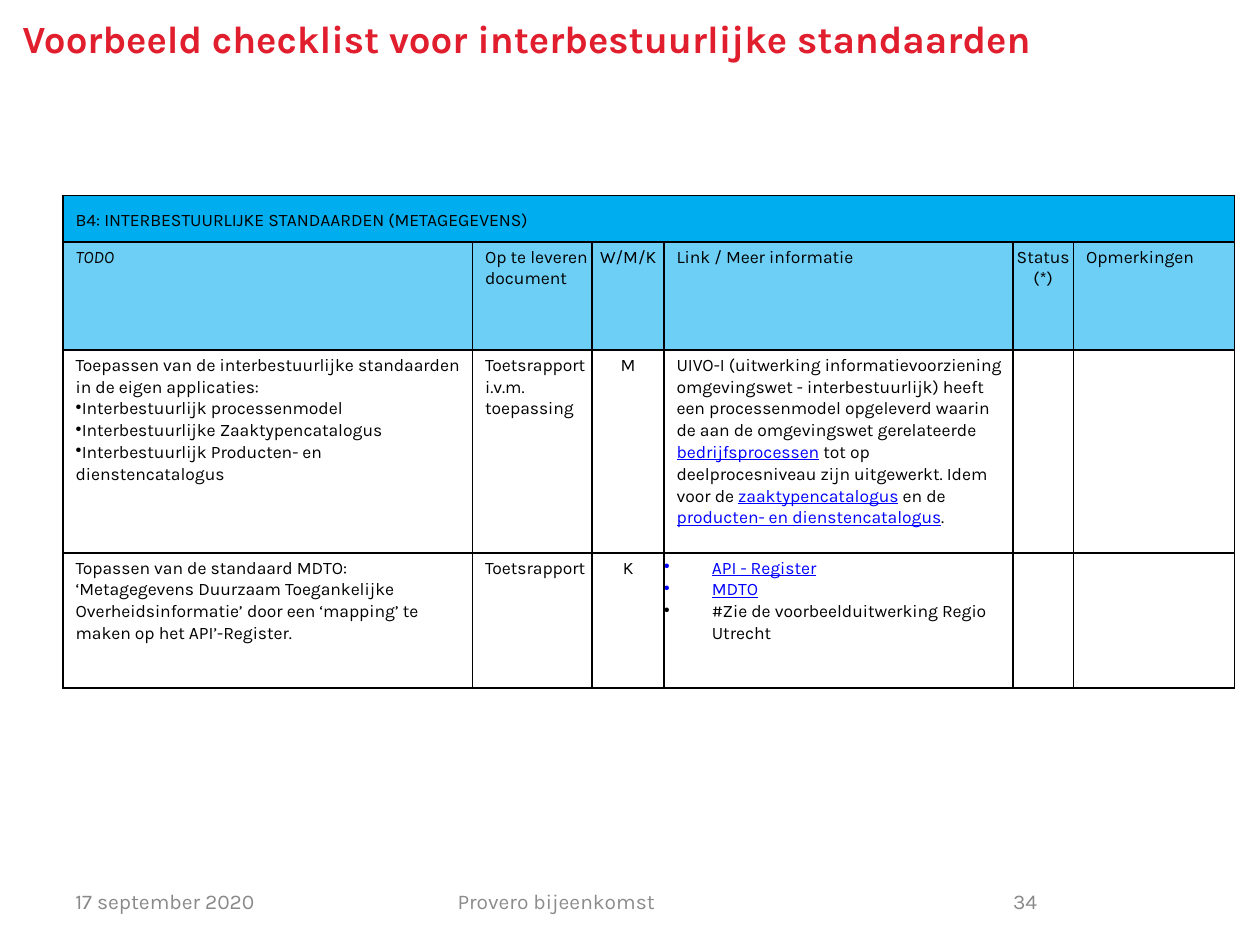
from pptx import Presentation
from pptx.dml.color import RGBColor
from pptx.enum.text import MSO_ANCHOR, PP_ALIGN
from pptx.oxml.ns import qn
from pptx.util import Inches, Pt
from lxml.etree import SubElement

FONT = "Karla"
RED = RGBColor(0xE1, 0x1E, 0x2D)
BLACK = RGBColor(0, 0, 0)
LINK_BLUE = RGBColor(0, 0, 0xFF)
BAND_BLUE = RGBColor(0, 0xAE, 0xEF)
HEADER_BLUE = RGBColor(0x6D, 0xCF, 0xF6)
GREY = RGBColor(0x89, 0x89, 0x89)
LIGHT_GREY = RGBColor(0x8C, 0x8C, 0x8C)

COLUMNS = (3.25, 0.95, 0.57, 2.77, 0.48, 1.28)
ROWS = (0.37, 0.86, 1.61, 1.07)
CENTRED_COLUMNS = (2, 4)
LEFT, TOP = 0.5, 1.55
FOOTER_TOP, FOOTER_HEIGHT = 6.95, 0.4

TITLE = "Voorbeeld checklist voor interbestuurlijke standaarden"
BAND = "B4: INTERBESTUURLIJKE STANDAARDEN (METAGEGEVENS)"
HEADERS = ("TODO", "Op te leveren document", "W/M/K",
           "Link / Meer informatie", "Status (*)", "Opmerkingen")


def plain(text):
    return text, False


def link(text):
    return text, True


def line(*parts, bullet=False, hang=0):
    return parts, bullet, hang


CHECKS = (
    (
        [line(plain("Toepassen van de interbestuurlijke standaarden in de eigen applicaties:")),
         line(plain("Interbestuurlijk processenmodel"), bullet=True),
         line(plain("Interbestuurlijke Zaaktypencatalogus"), bullet=True),
         line(plain("Interbestuurlijk Producten- en dienstencatalogus"), bullet=True)],
        [line(plain("Toetsrapport i.v.m. toepassing"))],
        [line(plain("M"))],
        [line(plain("UIVO-I (uitwerking informatievoorziening omgevingswet - interbestuurlijk) "
                    "heeft een processenmodel opgeleverd waarin de aan de omgevingswet gerelateerde "),
              link("bedrijfsprocessen"),
              plain(" tot op deelprocesniveau zijn uitgewerkt. Idem voor de "),
              link("zaaktypencatalogus"),
              plain(" en de "),
              link("producten- en dienstencatalogus"),
              plain("."))],
        [], [],
    ),
    (
        [line(plain("Topassen van de standaard MDTO:")),
         line(plain("‘Metagegevens Duurzaam Toegankelijke Overheidsinformatie’ "
                    "door een ‘mapping’ te maken op het API’-Register."))],
        [line(plain("Toetsrapport"))],
        [line(plain("K"))],
        [line(link("API - Register"), bullet=True, hang=0.38),
         line(link("MDTO"), bullet=True, hang=0.38),
         line(plain("#Zie de voorbeelduitwerking Regio Utrecht"), bullet=True, hang=0.38)],
        [], [],
    ),
)


def add_span(para, text, size, color, bold=False, italic=False, underline=False):
    span = para.add_run()
    span.text = text
    font = span.font
    font.name, font.size = FONT, Pt(size)
    font.bold, font.italic, font.underline = bold, italic, underline
    font.color.rgb = color


def add_label(page, text, area, size, color, align=PP_ALIGN.LEFT, bold=False):
    box = page.shapes.add_textbox(*map(Inches, area))
    frame = box.text_frame
    frame.word_wrap = True
    frame.vertical_anchor = MSO_ANCHOR.MIDDLE
    para = frame.paragraphs[0]
    para.alignment = align
    add_span(para, text, size, color, bold)


def style_cell(cell, fill):
    cell.margin_left = cell.margin_right = cell.margin_bottom = 0
    cell.margin_top = Inches(0.03)
    properties = cell._tc.get_or_add_tcPr()
    for side in ("lnL", "lnR", "lnT", "lnB"):
        border = SubElement(properties, qn(f"a:{side}"), w=str(Pt(1)))
        solid = SubElement(border, qn("a:solidFill"))
        SubElement(solid, qn("a:srgbClr"), val=str(BLACK))
    if fill is None:
        cell.fill.background()
    else:
        cell.fill.solid()
        cell.fill.fore_color.rgb = fill


def fill_cell(cell, lines, centred=False, italic=False):
    frame = cell.text_frame
    for index, (parts, bullet, hang) in enumerate(lines):
        para = frame.add_paragraph() if index else frame.paragraphs[0]
        para.line_spacing = 1.07
        properties = para._p.get_or_add_pPr()
        if centred:
            para.alignment = PP_ALIGN.CENTER
        else:
            properties.set("marL", str(Inches(hang or 0.1)))
            properties.set("indent", str(Inches(-hang)))
        if bullet:
            SubElement(properties, qn("a:buChar"), char="•")
        for text, linked in parts:
            add_span(para, text, 10, LINK_BLUE if linked else BLACK,
                     italic=italic, underline=linked)


def add_checklist(page):
    frame = page.shapes.add_table(len(ROWS), len(COLUMNS), Inches(LEFT), Inches(TOP),
                                  Inches(sum(COLUMNS)), Inches(sum(ROWS)))
    table = frame.table
    table.first_row = table.horz_banding = False
    for column, width in zip(table.columns, COLUMNS):
        column.width = Inches(width)
    for row, height in zip(table.rows, ROWS):
        row.height = Inches(height)
    for row, fill in zip(table.rows, (BAND_BLUE, HEADER_BLUE, None, None)):
        for cell in row.cells:
            style_cell(cell, fill)

    band = table.cell(0, 0)
    band.merge(table.cell(0, len(COLUMNS) - 1))
    band.vertical_anchor = MSO_ANCHOR.MIDDLE
    fill_cell(band, [line(plain(BAND))])

    headers = [[line(plain(header))] for header in HEADERS]
    for row, contents in enumerate((headers, *CHECKS), start=1):
        for column, lines in enumerate(contents):
            fill_cell(table.cell(row, column), lines, column in CENTRED_COLUMNS,
                      italic=(row, column) == (1, 0))


def add_footer(page):
    left = LEFT
    for text, width, color, align in (
        ("17 september 2020", 2.33, GREY, PP_ALIGN.LEFT),
        ("Provero bijeenkomst", 3.17, LIGHT_GREY, PP_ALIGN.CENTER),
        ("34", 2.33, GREY, PP_ALIGN.RIGHT),
    ):
        add_label(page, text, (left, FOOTER_TOP, width, FOOTER_HEIGHT), 12, color, align)
        left += width


def main():
    deck = Presentation()
    deck.slide_width, deck.slide_height = Inches(10), Inches(7.5)
    page = deck.slides.add_slide(deck.slide_layouts[6])
    add_label(page, TITLE, (0.08, -0.07, 9, 0.74), 22, RED, bold=True)
    add_checklist(page)
    add_footer(page)
    deck.save("out.pptx")


if __name__ == "__main__":
    main()
